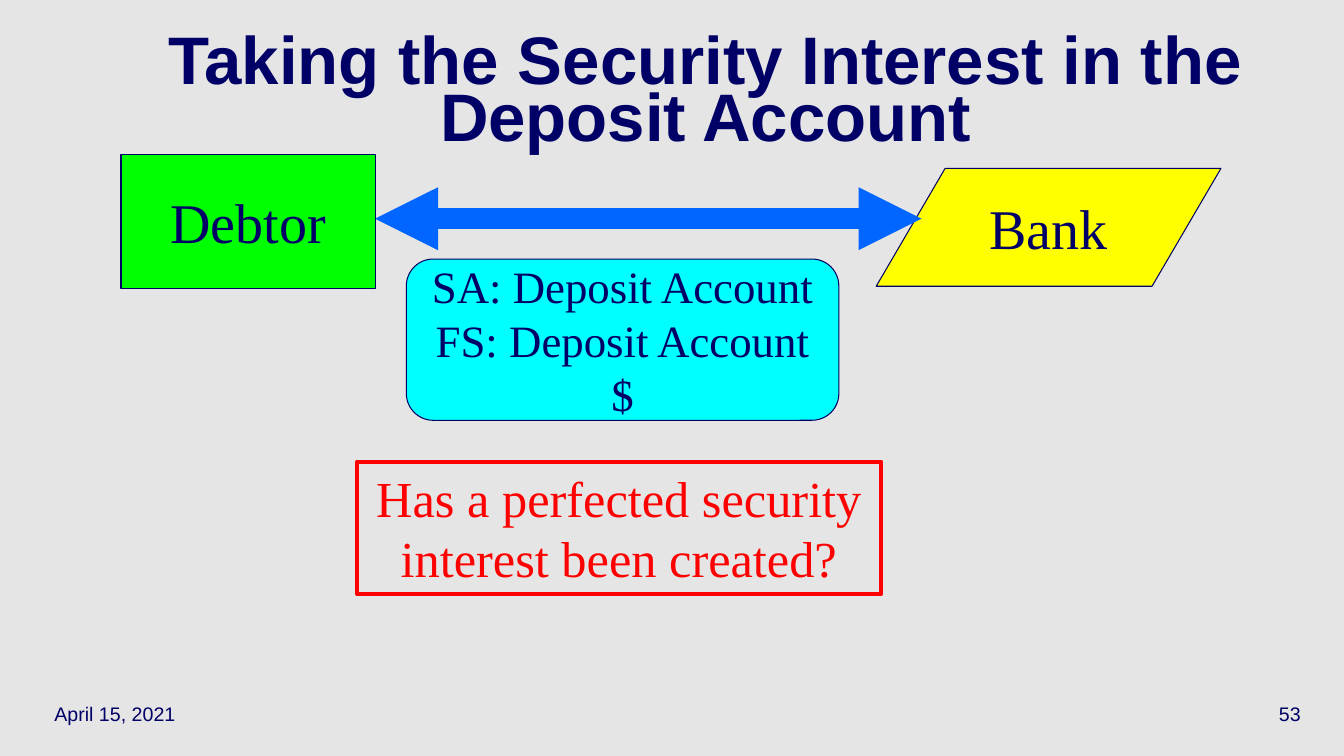
from lxml.etree import SubElement as Sub
from pptx import Presentation
from pptx.dml.color import RGBColor as Rgb
from pptx.enum.shapes import MSO_CONNECTOR as Link, MSO_SHAPE as Shape
from pptx.enum.text import MSO_ANCHOR as Anchor, MSO_AUTO_SIZE as Fit, PP_ALIGN as Align
from pptx.oxml.ns import qn
from pptx.util import Inches, Pt

HUES = {
    "back": "E5E5E5",
    "navy": "000066",
    "blue": "0066FF",
    "green": "00FF00",
    "cyan": "00FFFF",
    "yellow": "FFFF00",
    "red": "FF0000",
}
SANS, SERIF = "Arial", "Times New Roman"


def hue(name):
    return Rgb.from_string(HUES[name])


def apply(item, form):
    for key, value in form.items():
        setattr(item, key, value)


class Board:
    def __init__(self, deck):
        self.slide = deck.slides.add_slide(deck.slide_layouts[5])
        self.shapes = self.slide.shapes
        fill = self.slide.background.fill
        fill.solid()
        fill.fore_color.rgb = hue("back")

    def letter(self, item, text, size, face=SERIF, ink="navy", align=Align.CENTER,
               bold=False, lead=None, wrap=True, anchor=Anchor.MIDDLE):
        frame = item.text_frame
        frame.text = text
        apply(frame, {"auto_size": Fit.NONE, "word_wrap": wrap, "vertical_anchor": anchor})
        for para in frame.paragraphs:
            apply(para, {"alignment": align, "line_spacing": lead})
            for run in para.runs:
                apply(run.font, {"size": Pt(size), "name": face, "bold": bold})
                run.font.color.rgb = hue(ink)

    def title(self, box, text, size):
        item = self.shapes.title
        apply(item, dict(zip(("left", "top", "width", "height"), map(Inches, box))))
        self.letter(item, text, size, SANS, bold=True, lead=0.7)

    def label(self, box, text, align):
        item = self.shapes.add_textbox(*map(Inches, box))
        self.letter(item, text, 14, SANS, align=align)

    def node(self, kind, box, text, size, fill=None, edge="navy", width=0.75, **form):
        item = self.shapes.add_shape(kind, *map(Inches, box))
        item.shadow.inherit = False
        if fill:
            item.fill.solid()
            item.fill.fore_color.rgb = hue(fill)
        else:
            item.fill.background()
        item.line.color.rgb = hue(edge)
        item.line.width = Pt(width)
        self.letter(item, text, size, **form)

    def arrow(self, start, end, ink, width):
        item = self.shapes.add_connector(Link.STRAIGHT, *map(Inches, start + end))
        item.line.color.rgb = hue(ink)
        item.line.width = Pt(width)
        line = item.line._get_or_add_ln()
        for tag in ("a:headEnd", "a:tailEnd"):
            Sub(line, qn(tag), type="triangle")
        Sub(item._element.spPr, qn("a:effectLst"))


def main():
    deck = Presentation()
    apply(deck, {"slide_width": Inches(13.33), "slide_height": Inches(7.5)})
    board = Board(deck)
    board.label((0.44, 6.83, 2.78, 0.5), "April 15, 2021", Align.LEFT)
    board.label((10.22, 6.83, 2.78, 0.5), "53", Align.RIGHT)
    board.title((0.89, 0.33, 12.22, 1.25),
                "Taking the Security Interest in the Deposit Account", 48)
    board.node(Shape.FLOWCHART_DATA, (8.69, 1.67, 3.42, 1.17), "Bank", 40,
               "yellow", wrap=False)
    board.arrow((3.72, 2.17), (9.14, 2.17), "blue", 15)
    board.node(Shape.FLOWCHART_ALTERNATE_PROCESS, (4.03, 2.57, 4.29, 1.6),
               "SA: Deposit Account\nFS: Deposit Account\n$", 32, "cyan", wrap=False)
    board.node(Shape.RECTANGLE, (3.54, 4.58, 5.2, 1.31),
               "Has a perfected security interest been created?", 36,
               edge="red", width=3, ink="red", anchor=Anchor.TOP)
    board.node(Shape.RECTANGLE, (1.2, 1.53, 2.52, 1.33), "Debtor", 40,
               "green", wrap=False)
    deck.save("out.pptx")


if __name__ == "__main__":
    main()
